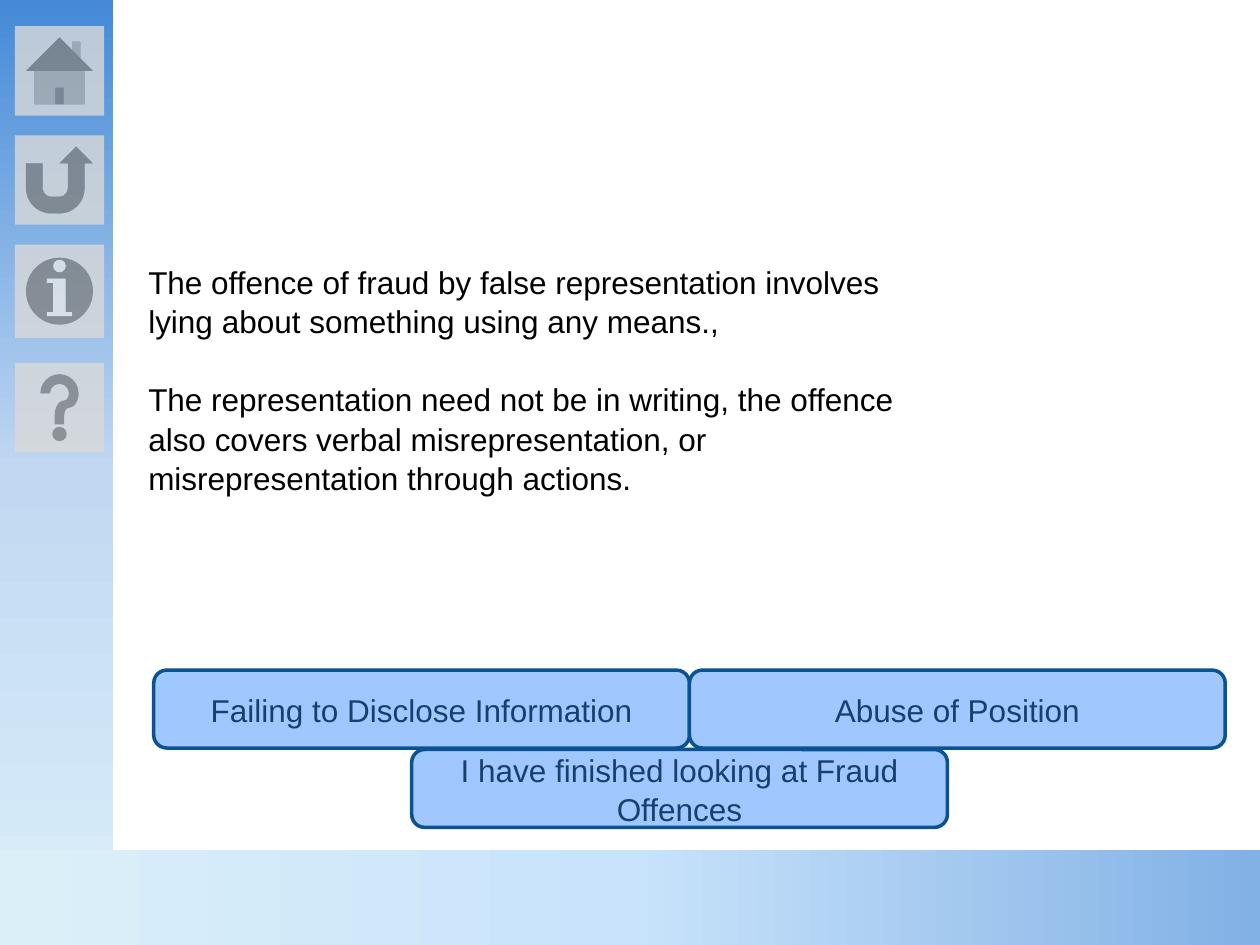
"""Build the fraud by false representation slide."""
import copy

import pptx
import pptx.dml.color
import pptx.enum.shapes
import pptx.enum.text
import pptx.oxml.ns
import pptx.util
from pptx.util import Cm

SHAPE = pptx.enum.shapes.MSO_SHAPE
COLORS = {
    "text": "000000",
    "icon": "D9D9D9",
    "button": "A0C8FF",
    "border": "0B5292",
    "label": "17406D",
    "side": ("448AD7", "C1D8F2", "DBEFF9"),
    "footer": ("82B1E5", "C8E3FB", "DBEFF9"),
}


def rgb(value):
    return pptx.dml.color.RGBColor.from_string(value)


def add_shape(s, kind, left, top, width, height):
    sp = s.shapes.add_shape(kind, Cm(left), Cm(top), Cm(width), Cm(height))
    sp.shadow.inherit = False
    sp.line.fill.background()
    return sp


def add_band(s, left, top, width, height, colors, rotation=0):
    sp = add_shape(s, SHAPE.RECTANGLE, left, top, width, height)
    sp.rotation = rotation
    sp.fill.gradient()
    sp.fill.gradient_angle = 180
    stops = sp._element.spPr.find(".//" + pptx.oxml.ns.qn("a:gsLst"))
    stops.insert(1, copy.deepcopy(stops[0]))
    for i, (stop, color) in enumerate(zip(sp.fill.gradient_stops, colors)):
        stop.position = i / 2
        stop.color.rgb = rgb(color)


def add_icon(s, kind, top, height=1.8):
    sp = add_shape(s, kind, 0.3, top, 1.8, height)
    sp.fill.solid()
    sp.fill.fore_color.rgb = rgb(COLORS["icon"])
    color = sp._element.spPr.find(".//" + pptx.oxml.ns.qn("a:srgbClr"))
    alpha = pptx.oxml.parse_xml(f'<a:alpha {pptx.oxml.ns.nsdecls("a")} val="80000"/>')
    color.append(alpha)


def format_paragraph(p, color):
    p.line_spacing = 1.05
    for r in p.runs:
        r.font.name = "Arial"
        r.font.size = pptx.util.Pt(18)
        r.font.color.rgb = rgb(color)


def add_text(s, left, top, width, height, paragraphs):
    tf = s.shapes.add_textbox(Cm(left), Cm(top), Cm(width), Cm(height)).text_frame
    tf.word_wrap = True
    tf.text = "\n".join(paragraphs)
    for i, p in enumerate(tf.paragraphs):
        format_paragraph(p, COLORS["text"])
        if i:
            p.space_before = pptx.util.Pt(21.7)


def add_button(s, left, top, label):
    sp = add_shape(s, SHAPE.ROUNDED_RECTANGLE, left, top, 10.8, 1.57)
    sp.fill.solid()
    sp.fill.fore_color.rgb = rgb(COLORS["button"])
    sp.line.color.rgb = rgb(COLORS["border"])
    sp.line.width = pptx.util.Pt(2)
    tf = sp.text_frame
    tf.word_wrap = True
    tf.vertical_anchor = pptx.enum.text.MSO_ANCHOR.MIDDLE
    tf.text = label
    p = tf.paragraphs[0]
    p.alignment = pptx.enum.text.PP_ALIGN.CENTER
    format_paragraph(p, COLORS["label"])


def main():
    prs = pptx.Presentation()
    prs.slide_width, prs.slide_height = Cm(25.4), Cm(19.05)
    s = prs.slides.add_slide(prs.slide_layouts[6])

    add_band(s, -8.38, 8.38, 19.05, 2.29, COLORS["side"], rotation=270)
    add_band(s, 0, 17.13, 25.4, 2, COLORS["footer"])

    add_icon(s, SHAPE.ACTION_BUTTON_HOME, 0.53)
    add_icon(s, SHAPE.ACTION_BUTTON_RETURN, 2.73)
    add_icon(s, SHAPE.ACTION_BUTTON_INFORMATION, 4.93, 1.88)
    add_icon(s, SHAPE.ACTION_BUTTON_HELP, 7.32)

    add_text(s, 2.74, 5.13, 16.36, 4.88, [
        "The offence of fraud by false representation involves lying about "
        "something using any means.,",
        "The representation need not be in writing, the offence also covers "
        "verbal misrepresentation, or misrepresentation through actions.",
    ])

    add_button(s, 3.1, 13.51, "Failing to Disclose Information")
    add_button(s, 8.3, 15.11, "I have finished looking at Fraud Offences")
    add_button(s, 13.9, 13.51, "Abuse of Position")
    prs.save("out.pptx")


if __name__ == "__main__":
    main()
